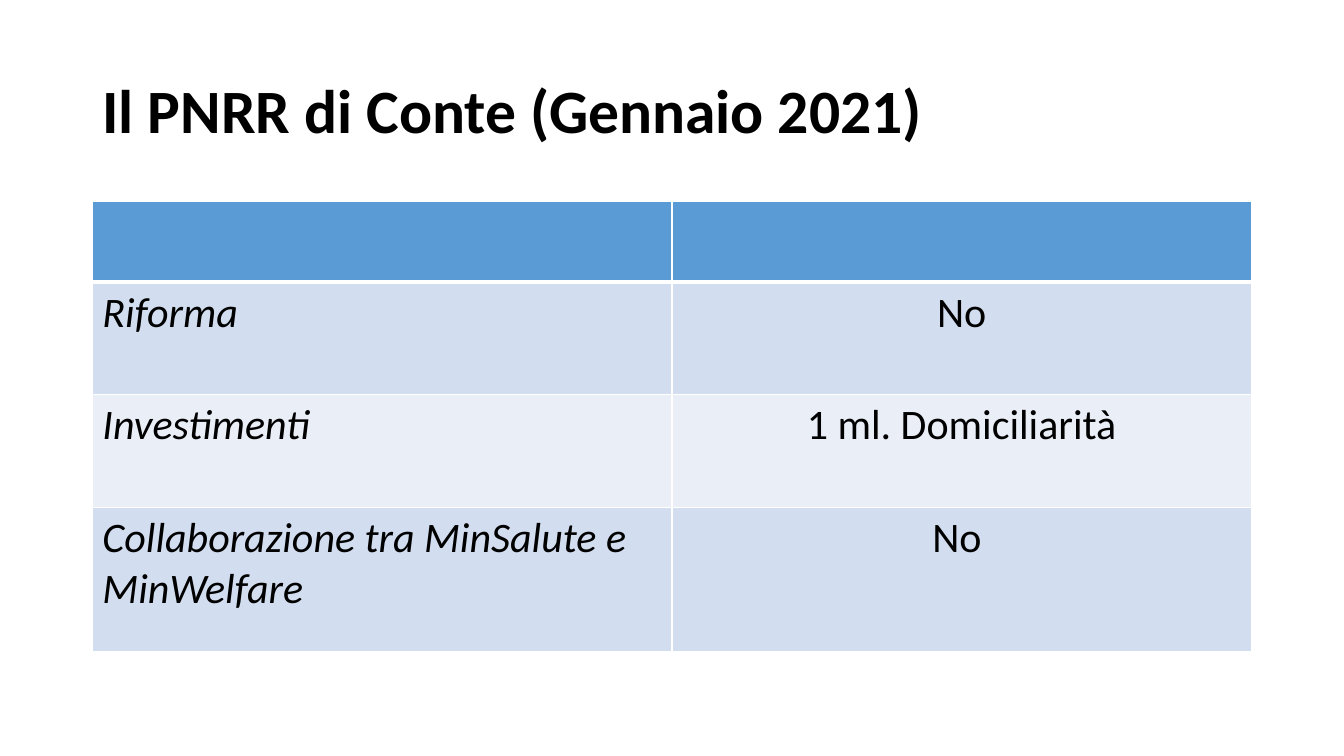
from dataclasses import dataclass

from lxml import etree
from pptx import Presentation
from pptx.dml.color import RGBColor
from pptx.enum import text
from pptx.oxml import ns
from pptx.util import Pt


@dataclass(frozen=True)
class Theme:
    font: str = "Calibri"
    ink: str = "000000"
    header: str = "5B9BD5"
    bands: tuple = ("D2DEEF", "EAEFF7")
    border: str = "FFFFFF"
    title_size: int = 44
    body_size: int = 30


theme = Theme()


def style_font(font, size, bold=False, italic=False):
    font.name = theme.font
    font.size = Pt(size)
    font.bold = bold
    font.italic = italic
    font.color.rgb = RGBColor.from_string(theme.ink)


def add_borders(cell, widths):
    """Draw the left, right, top and bottom borders, in that order."""
    properties = cell._tc.get_or_add_tcPr()
    for index, (side, width) in enumerate(zip("LRTB", widths)):
        line = etree.Element(ns.qn(f"a:ln{side}"), w=str(Pt(width)))
        fill = etree.SubElement(line, ns.qn("a:solidFill"))
        etree.SubElement(fill, ns.qn("a:srgbClr"), val=theme.border)
        properties.insert(index, line)


# Slide
presentation = Presentation()
presentation.slide_width = Pt(960)
presentation.slide_height = Pt(540)
slide = presentation.slides.add_slide(presentation.slide_layouts[5])

# Title
title = slide.shapes.title
title.left, title.top, title.width, title.height = Pt(66), Pt(28.75), Pt(828), Pt(104.4)
title.text_frame.text = "Il PNRR di Conte (Gennaio 2021)"
title.text_frame.vertical_anchor = text.MSO_ANCHOR.MIDDLE
title.text_frame.auto_size = text.MSO_AUTO_SIZE.NONE
paragraph = title.text_frame.paragraphs[0]
paragraph.alignment = text.PP_ALIGN.LEFT
paragraph.line_spacing = 0.9
style_font(paragraph.font, theme.title_size, bold=True)

# Table
rows = [
    ("", ""),
    ("Riforma", "No"),
    ("Investimenti", "1 ml. Domiciliarità"),
    ("Collaborazione tra MinSalute e MinWelfare", "No "),
]
row_heights = [57.6, 80.4, 80.4, 103]
table = slide.shapes.add_table(
    len(rows), 2, Pt(66), Pt(144), Pt(828), Pt(sum(row_heights))
).table

for row_index, (labels, height) in enumerate(zip(rows, row_heights)):
    table.rows[row_index].height = Pt(height)
    color = theme.bands[(row_index - 1) % 2] if row_index else theme.header
    top = 3 if row_index == 1 else 1
    bottom = 3 if row_index == 0 else 1
    for column_index, label in enumerate(labels):
        cell = table.cell(row_index, column_index)
        cell.fill.solid()
        cell.fill.fore_color.rgb = RGBColor.from_string(color)
        add_borders(cell, (1, 1, top, bottom))
        if label:
            cell.text = label
            paragraph = cell.text_frame.paragraphs[0]
            is_name = column_index == 0
            paragraph.alignment = text.PP_ALIGN.LEFT if is_name else text.PP_ALIGN.CENTER
            style_font(paragraph.font, theme.body_size, italic=is_name)

presentation.save("out.pptx")
